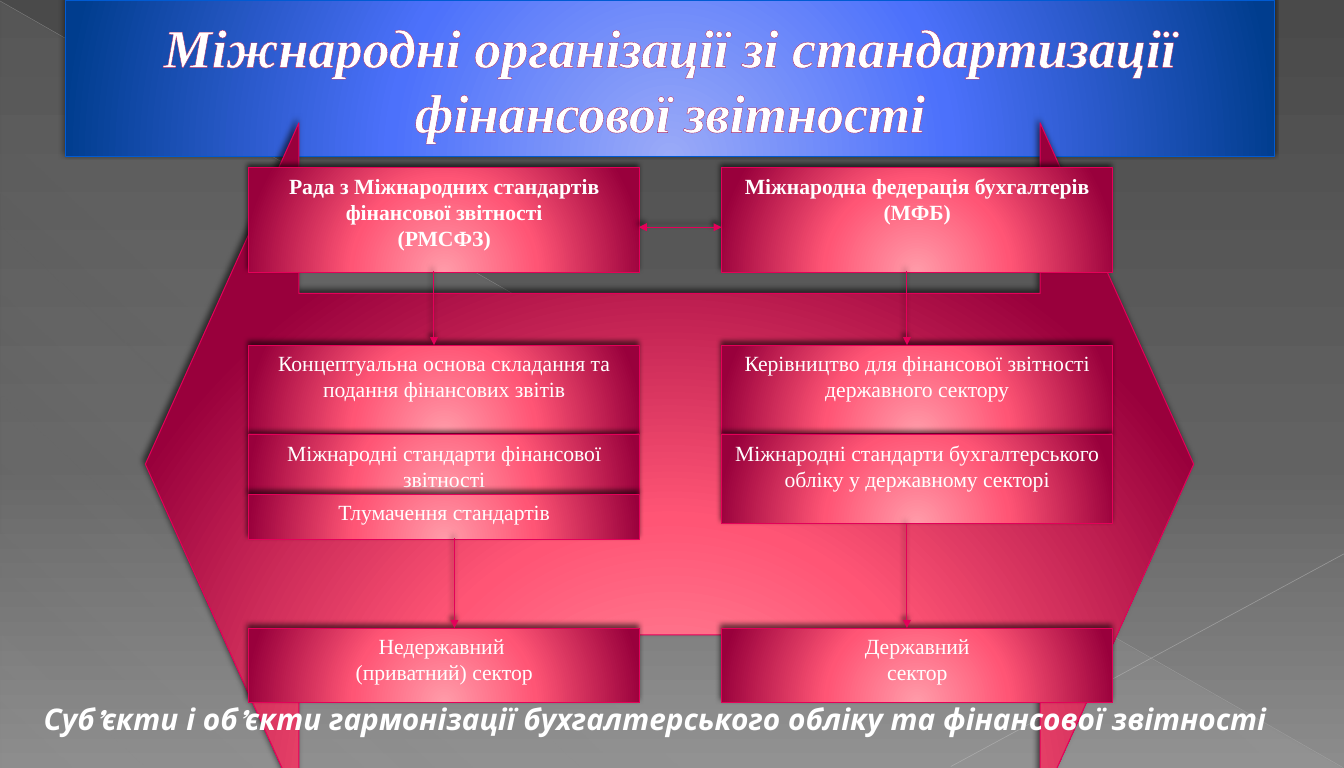
from lxml import etree
from pptx import Presentation
from pptx.dml.color import RGBColor
from pptx.enum import shapes, text
from pptx.oxml import ns
from pptx.util import Inches, Pt

# Content
SLIDE_SIZE = (441 / 32, 63 / 8)  # a 7:4 page
TITLE = "Міжнародні організації зі стандартизації фінансової звітності"
CAPTION = "Суб’єкти і об’єкти гармонізації бухгалтерського обліку та фінансової звітності"
# Each column: left edge, then boxes as (top, height, bold, paragraphs)
COLUMNS = [
    (2.55, [
        (1.72, 1.07, True, ["Рада з Міжнародних стандартів фінансової звітності", "(РМСФЗ)"]),
        (3.54, 0.91, False, ["Концептуальна основа складання та подання фінансових звітів"]),
        (4.46, 0.61, False, ["Міжнародні стандарти фінансової звітності"]),
        (5.07, 0.46, False, ["Тлумачення стандартів"]),
        (6.44, 0.76, False, ["Недержавний ", "(приватний) сектор"]),
    ]),
    (7.4, [
        (1.72, 1.07, True, ["Міжнародна федерація бухгалтерів", "(МФБ)"]),
        (3.54, 0.91, False, ["Керівництво для фінансової звітності державного сектору"]),
        (4.46, 0.91, False, ["Міжнародні стандарти бухгалтерського обліку у державному секторі"]),
        (6.44, 0.76, False, ["Державний", "сектор"]),
    ]),
]
BOX_WIDTH = 4.01
# Arrows: start, end, whether both ends are pointed
ARROWS = [
    ((4.45, 2.78), (4.45, 3.54), False),
    ((4.66, 5.52), (4.66, 6.44), False),
    ((9.3, 2.78), (9.3, 3.54), False),
    ((9.3, 5.37), (9.3, 6.44), False),
    ((6.55, 2.33), (7.4, 2.33), True),
]
# Background lines: start, end, colour, width, opacity
RAYS = [
    ((0, 0.01), (13.77, 7.87), "BFBFBF", 0.39, 35),
    ((13.78, 5.68), (9.75, 7.86), "C6C6C6", 0.47, 45),
]

THEME = {
    "serif": "Times New Roman", "sans": "League Spartan",
    "title": 40, "box": 16, "caption": 22,
    "white": "FFFFFF", "red_line": "E40059", "blue_line": "005BD3", "title_edge": "B12761",
    "red": [(0, "FF9BA9", 100), (46, "FF5575", 100), (100, "99003C", 100)],
    "blue": [(0, "9AAAF8", 100), (46, "4C71FB", 100), (100, "003D8E", 100)],
    "backdrop": [(0, "4A4A4A", 100), (60, "626262", 100), (100, "8C8C8C", 100)],
    "haze": [(0, "D2D2D2", 10), (70, "D2D2D2", 8), (100, "D2D2D2", 1)],
}


# XML helpers
def add(parent, tag, **attributes):
    values = {key: str(value) for key, value in attributes.items()}
    return etree.SubElement(parent, ns.qn(tag), values)


def add_color(parent, color, opacity):
    element = add(parent, "a:srgbClr", val=color)
    if opacity < 100:
        add(element, "a:alpha", val=opacity * 1000)


def set_gradient(fill, properties, stops, angle=None):
    """Linear at the given angle, or a glow rising from below the shape."""
    fill.solid()
    fill.fore_color.rgb = RGBColor.from_string(stops[0][1])
    solid = properties.find(ns.qn("a:solidFill"))
    gradient = etree.Element(ns.qn("a:gradFill"), rotWithShape="1")
    stop_list = add(gradient, "a:gsLst")
    for position, color, opacity in stops:
        add_color(add(stop_list, "a:gs", pos=position * 1000), color, opacity)
    if angle is None:
        glow = add(gradient, "a:path", path="circle")
        add(glow, "a:fillToRect", l=50000, t=155000, r=50000, b=-55000)
    else:
        add(gradient, "a:lin", ang=angle * 60000, scaled=0)
    properties.replace(solid, gradient)


def add_shadow(properties):
    effects = properties.find(ns.qn("a:effectLst"))
    if effects is None:
        effects = add(properties, "a:effectLst")
    shadow = add(effects, "a:outerShdw", blurRad=Pt(4), dist=Pt(3),
                 dir=245 * 60000, rotWithShape=0)
    add_color(shadow, "000000", 60)


def set_line(line, color, width):
    line.color.rgb = RGBColor.from_string(color)
    line.width = Pt(width)


def style_panel(shape, stops, line_color):
    set_gradient(shape.fill, shape._element.spPr, stops)
    set_line(shape.line, line_color, 0.75)
    shape.shadow.inherit = False
    add_shadow(shape._element.spPr)


def write(shape, lines, size, font, bold=False, italic=False,
          align=text.PP_ALIGN.CENTER, anchor=text.MSO_ANCHOR.TOP):
    frame = shape.text_frame
    frame.text = "\n".join(lines)
    frame.word_wrap = True
    frame.auto_size = text.MSO_AUTO_SIZE.NONE
    frame.vertical_anchor = anchor
    for paragraph in frame.paragraphs:
        paragraph.alignment = align
        paragraph.font.size = Pt(size)
        paragraph.font.name = font
        paragraph.font.bold = bold
        paragraph.font.italic = italic
        paragraph.font.color.rgb = RGBColor.from_string(THEME["white"])


def add_panel(slide, kind, *place):
    shape = slide.shapes.add_shape(kind, *map(Inches, place))
    style_panel(shape, THEME["red"], THEME["red_line"])
    return shape


def add_line(slide, start, end, color, width):
    connector = slide.shapes.add_connector(
        shapes.MSO_CONNECTOR.STRAIGHT, *map(Inches, start + end))
    set_line(connector.line, color, width)
    add(connector._element.spPr, "a:effectLst")
    return connector


def add_backdrop(slide):
    fill = slide.background.fill
    fill.solid()
    set_gradient(fill, slide._element.xpath(".//p:bgPr")[0], THEME["backdrop"], 90)
    haze = slide.shapes.add_shape(shapes.MSO_SHAPE.RIGHT_TRIANGLE,
                                  *map(Inches, (0.01, 0.02, 13.76, 7.85)))
    set_gradient(haze.fill, haze._element.spPr, THEME["haze"], 133)
    haze.line.fill.background()
    haze.shadow.inherit = False
    for start, end, color, width, opacity in RAYS:
        ray = add_line(slide, start, end, color, width)
        add(ray._element.xpath(".//a:ln//a:srgbClr")[0], "a:alpha", val=opacity * 1000)


def add_title(slide):
    title = slide.shapes.title
    title.left, title.top, title.width, title.height = map(Inches, (0.67, 0, 12.4, 1.61))
    style_panel(title, THEME["blue"], THEME["blue_line"])
    write(title, [TITLE], THEME["title"], THEME["serif"], True, True,
          anchor=text.MSO_ANCHOR.MIDDLE)
    # Thin outline around the letters
    properties = title.text_frame.paragraphs[0].runs[0]._r.get_or_add_rPr()
    edge = add(properties, "a:ln", w=Pt(0.5))
    add_color(add(edge, "a:solidFill"), THEME["title_edge"], 100)
    slide.shapes._spTree.append(title._element)  # above the backdrop


def add_scheme(slide):
    arrow = add_panel(slide, shapes.MSO_SHAPE.LEFT_RIGHT_ARROW, 1.49, 1.26, 10.75, 7)
    arrow.adjustments[0], arrow.adjustments[1] = 0.5, 0.225
    for left, boxes in COLUMNS:
        for top, height, bold, lines in boxes:
            box = add_panel(slide, shapes.MSO_SHAPE.RECTANGLE, left, top, BOX_WIDTH, height)
            write(box, lines, THEME["box"], THEME["serif"], bold)
    for start, end, both in ARROWS:
        connector = add_line(slide, start, end, THEME["red_line"], 0.75)
        line = connector.line._get_or_add_ln()
        if both:
            add(line, "a:headEnd", type="triangle")
        add(line, "a:tailEnd", type="triangle")
        add_shadow(connector._element.spPr)


def main():
    presentation = Presentation()
    presentation.slide_width, presentation.slide_height = map(Inches, SLIDE_SIZE)
    slide = presentation.slides.add_slide(presentation.slide_layouts[5])
    add_backdrop(slide)
    add_title(slide)
    add_scheme(slide)
    # Caption under the scheme
    caption = slide.shapes.add_textbox(*map(Inches, (0.35, 7.14, 13.19, 0.47)))
    write(caption, [CAPTION], THEME["caption"], THEME["sans"], True, True,
          align=text.PP_ALIGN.LEFT)
    presentation.save("out.pptx")


if __name__ == "__main__":
    main()
